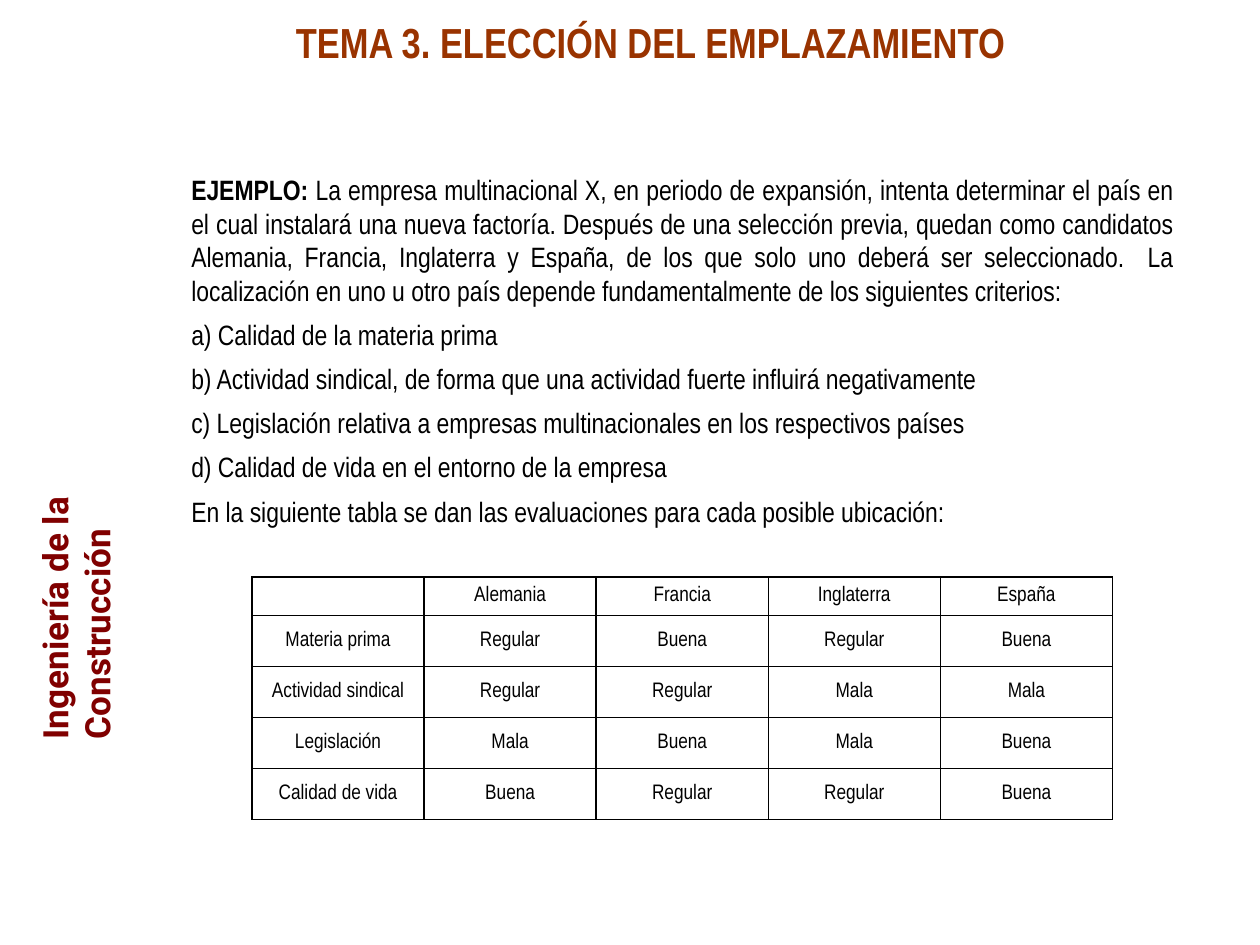
from lxml import etree
from pptx import Presentation
from pptx.dml.color import RGBColor
from pptx.enum.text import MSO_ANCHOR, PP_ALIGN
from pptx.oxml.ns import qn
from pptx.util import Inches, Pt

CENTER, JUSTIFY = PP_ALIGN.CENTER, PP_ALIGN.JUSTIFY
MIDDLE = MSO_ANCHOR.MIDDLE
BLACK = RGBColor(0x00, 0x00, 0x00)
MAROON = RGBColor(0x80, 0x00, 0x00)
RUST = RGBColor(0x99, 0x33, 0x00)
NARROW = "Arial Narrow"

prs = Presentation()
prs.slide_width, prs.slide_height = Inches(10), Inches(7.5)
W, H = prs.slide_width / 100, prs.slide_height / 100  # one percent of the slide
s = prs.slides.add_slide(prs.slide_layouts[6])


def add_box(left, top, width, height, wrap=True):
    box = s.shapes.add_textbox(int(left * W), int(top * H), int(width * W), int(height * H))
    box.text_frame.word_wrap = wrap
    return box


def set_font(font, size, color=BLACK, name=NARROW, bold=False):
    font.size, font.name, font.bold = Pt(size), name, bold
    font.color.rgb = color


# Course name along the left edge
side = add_box(-13.4, 52.93, 35.5, 5.87)
side.rotation = 270
p = side.text_frame.paragraphs[0]
p.text = "Ingeniería de la Construcción"
set_font(p.font, 20, MAROON, "Roboto", True)

# Title
p = add_box(22.5, 1.07, 58.9, 6.67, wrap=False).text_frame.paragraphs[0]
p.text = "TEMA 3. ELECCIÓN DEL EMPLAZAMIENTO"
set_font(p.font, 24, RUST, bold=True)

# Example: each paragraph is a bold lead and its text
example = [
    ("EJEMPLO: ", "La empresa multinacional X, en periodo de expansión, intenta determinar "
     "el país en el cual instalará una nueva factoría. Después de una selección previa, "
     "quedan como candidatos Alemania, Francia, Inglaterra y España, de los que solo uno "
     "deberá ser seleccionado.  La localización en uno u otro país depende "
     "fundamentalmente de los siguientes criterios:"),
    ("", "a) Calidad de la materia prima"),
    ("", "b) Actividad sindical, de forma que una actividad fuerte influirá negativamente"),
    ("", "c) Legislación relativa a empresas multinacionales en los respectivos países"),
    ("", "d) Calidad de vida en el entorno de la empresa"),
    ("", "En la siguiente tabla se dan las evaluaciones para cada posible ubicación:"),
]
tf = add_box(14.2, 17.07, 80, 39.33).text_frame
for i, (lead, text) in enumerate(example):
    p = tf.add_paragraph() if i else tf.paragraphs[0]
    p.alignment = JUSTIFY
    p.space_before, p.space_after = Pt(3 if i else 0), Pt(3)
    if i == 0:
        tf.margin_top = Inches(0.05) + Pt(3)
    for part, bold in ((lead, True), (text, False)):
        if part:
            r = p.add_run()
            r.text = part
            set_font(r.font, 16, bold=bold)

# Table of evaluations
rows = [
    ["", "Alemania", "Francia", "Inglaterra", "España"],
    ["Materia prima", "Regular", "Buena", "Regular", "Buena"],
    ["Actividad sindical", "Regular", "Regular", "Mala", "Mala"],
    ["Legislación", "Mala", "Buena", "Mala", "Buena"],
    ["Calidad de vida", "Buena", "Regular", "Regular", "Buena"],
]
COL_W, HEAD_H, ROW_H = 13.66 * W, 4.05 * H, 5.4 * H
table = s.shapes.add_table(len(rows), len(rows[0]), int(20 * W), int(61.07 * H),
                           int(5 * COL_W), int(HEAD_H + 4 * ROW_H)).table
table.first_row = table.horz_banding = False
for col in table.columns:
    col.width = int(COL_W)
for i, values in enumerate(rows):
    table.rows[i].height = int(ROW_H if i else HEAD_H)
    for j, value in enumerate(values):
        cell = table.cell(i, j)
        cell.vertical_anchor = MIDDLE
        if not value:
            cell.margin_top = cell.margin_bottom = 0
        p = cell.text_frame.paragraphs[0]
        p.text = value
        p.alignment = CENTER
        set_font(p.font, 12)
        # Black borders come before the fill in the cell properties
        tcPr = cell._tc.get_or_add_tcPr()
        for edge in ("a:lnL", "a:lnR", "a:lnT", "a:lnB"):
            ln = etree.SubElement(tcPr, qn(edge), w=str(Pt(1)))
            fill = etree.SubElement(ln, qn("a:solidFill"))
            etree.SubElement(fill, qn("a:srgbClr"), val=str(BLACK))
        cell.fill.background()

prs.save("out.pptx")
